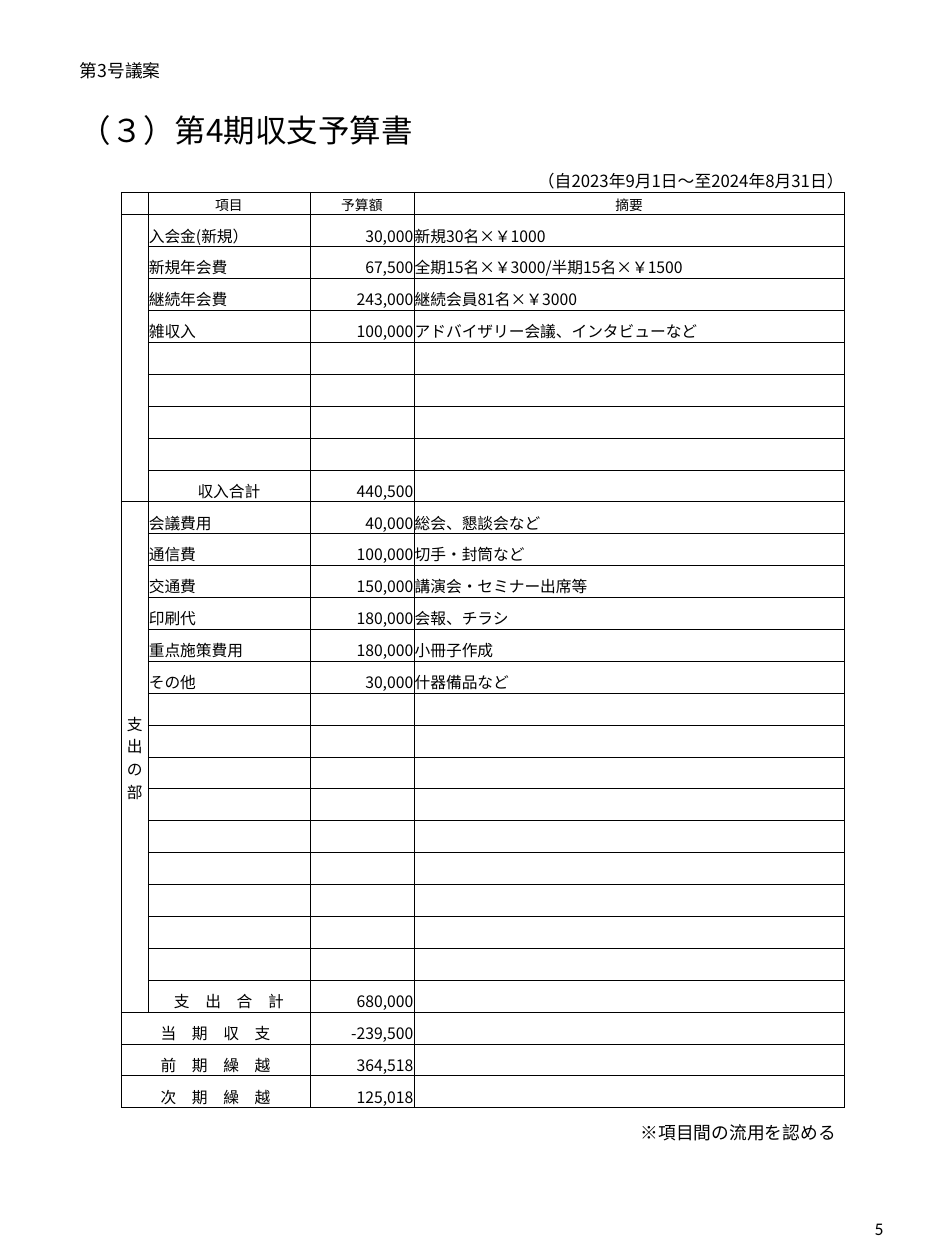
import lxml.etree
import pptx
import pptx.dml.color
import pptx.enum.text
import pptx.oxml.ns
import pptx.util

Inches = pptx.util.Inches
ALIGN = pptx.enum.text.PP_ALIGN
ANCHOR = pptx.enum.text.MSO_ANCHOR
qn = pptx.oxml.ns.qn

JAPANESE_FONT = "Noto Sans CJK JP"
BLACK = "000000"
COLUMN_WIDTHS = [0.38, 2.28, 1.47, 6.07]
DATE_HEIGHT, HEADER_HEIGHT, ROW_HEIGHT = 0.55, 0.32, 0.45

# Budget content: item, amount, remarks
PERIOD = "（自2023年9月1日～至2024年8月31日）"
HEADINGS = ["項目", "予算額", "摘要"]
INCOME = [
    ("入会金(新規）", "30,000", "新規30名×￥1000"),
    ("新規年会費", "67,500", "全期15名×￥3000/半期15名×￥1500"),
    ("継続年会費", "243,000", "継続会員81名×￥3000"),
    ("雑収入", "100,000", "アドバイザリー会議、インタビューなど"),
]
EXPENSES = [
    ("会議費用", "40,000", "総会、懇談会など"),
    ("通信費", "100,000", "切手・封筒など"),
    ("交通費", "150,000", "講演会・セミナー出席等"),
    ("印刷代", "180,000", "会報、チラシ"),
    ("重点施策費用", "180,000", "小冊子作成"),
    ("その他", "30,000", "什器備品など"),
]
# Section label, items, number of rows including the total, total
SECTIONS = [
    ("", INCOME, 9, ("収入合計", "440,500")),
    ("支出の部", EXPENSES, 16, ("支　出　合　計", "680,000")),
]
BALANCES = [
    ("当　期　収　支", "-239,500"),
    ("前　期　繰　越", "364,518"),
    ("次　期　繰　越", "125,018"),
]


def color(value):
    return pptx.dml.color.RGBColor.from_string(value)


def set_attributes(target, values):
    for name, value in values.items():
        setattr(target, name, value)


def write_text(text_frame, text, size, align=ALIGN.LEFT, font=JAPANESE_FONT):
    paragraph = text_frame.paragraphs[0]
    paragraph.alignment = align
    run = paragraph.add_run()
    run.text = text
    set_attributes(run.font, {"size": pptx.util.Pt(size), "name": font})
    run.font.color.rgb = color(BLACK)
    properties = run.font._element
    lxml.etree.SubElement(properties, qn("a:ea"), typeface=font)


def add_text(slide, text, left, top, width, height, size, **options):
    box = slide.shapes.add_textbox(
        Inches(left), Inches(top), Inches(width), Inches(height))
    box.text_frame.word_wrap = True
    write_text(box.text_frame, text, size, **options)


def set_borders(cell, visible_sides):
    properties = cell._tc.get_or_add_tcPr()
    for index, side in enumerate("LRTB"):
        line = lxml.etree.Element(qn(f"a:ln{side}"), w=str(pptx.util.Pt(0.5)))
        if side in visible_sides:
            fill = lxml.etree.SubElement(line, qn("a:solidFill"))
            lxml.etree.SubElement(fill, qn("a:srgbClr"), val=BLACK)
        else:
            lxml.etree.SubElement(line, qn("a:noFill"))
        properties.insert(index, line)


def format_cell(cell, visible_sides):
    set_attributes(cell, {
        "margin_left": Inches(0.01), "margin_right": Inches(0.01),
        "margin_top": Inches(0.01), "margin_bottom": 0,
        "vertical_anchor": ANCHOR.BOTTOM,
    })
    cell.fill.background()
    set_borders(cell, visible_sides)


def finish_empty_cell(cell):
    # Small type keeps an empty cell from stretching its row
    paragraph = cell.text_frame.paragraphs[0]
    lxml.etree.SubElement(paragraph._p, qn("a:endParaRPr"), sz="1400")


def fill_row(table, row, values, aligns, size=16):
    for column, (text, align) in enumerate(zip(values, aligns), start=1):
        write_text(table.cell(row, column).text_frame, text, size, align)


def fill_section(table, first_row, label, items, row_count, total):
    last_row = first_row + row_count - 1
    label_cell = table.cell(first_row, 0)
    label_cell.merge(table.cell(last_row, 0))
    if label:
        label_cell.vertical_anchor = ANCHOR.MIDDLE
        label_cell._tc.get_or_add_tcPr().set("vert", "eaVert")
        write_text(label_cell.text_frame, label, 16, ALIGN.CENTER)
    for row, item in enumerate(items, start=first_row):
        fill_row(table, row, item, [ALIGN.LEFT, ALIGN.RIGHT, ALIGN.LEFT])
    fill_row(table, last_row, total, [ALIGN.CENTER, ALIGN.RIGHT])
    return last_row + 1


def add_budget_table(slide, left, top):
    body_rows = sum(section[2] for section in SECTIONS) + len(BALANCES)
    heights = [DATE_HEIGHT, HEADER_HEIGHT] + [ROW_HEIGHT] * body_rows
    table = slide.shapes.add_table(
        len(heights), len(COLUMN_WIDTHS), Inches(left), Inches(top),
        Inches(sum(COLUMN_WIDTHS)), Inches(sum(heights))).table
    set_attributes(table, {"first_row": False, "horz_banding": False})
    for column, width in zip(table.columns, COLUMN_WIDTHS):
        column.width = Inches(width)
    for index, (row, height) in enumerate(zip(table.rows, heights)):
        row.height = Inches(height)
        for cell in row.cells:
            format_cell(cell, "LRTB" if index else "B")

    # Period and headings
    write_text(table.cell(0, 3).text_frame, PERIOD, 17, ALIGN.RIGHT)
    fill_row(table, 1, HEADINGS, [ALIGN.CENTER] * 3, size=14)

    # Income and expenses
    next_row = 2
    for section in SECTIONS:
        next_row = fill_section(table, next_row, *section)

    # Balances
    for row, (label, amount) in enumerate(BALANCES, start=next_row):
        label_cell = table.cell(row, 0)
        label_cell.merge(table.cell(row, 1))
        write_text(label_cell.text_frame, label, 16, ALIGN.CENTER)
        write_text(table.cell(row, 2).text_frame, amount, 16, ALIGN.RIGHT)

    for cell in table.iter_cells():
        if not cell.text_frame.text:
            finish_empty_cell(cell)


def main():
    presentation = pptx.Presentation()
    presentation.slide_width = Inches(13.33)
    presentation.slide_height = Inches(17.78)
    slide = presentation.slides.add_slide(presentation.slide_layouts[6])

    # Title and page number
    add_text(slide, "（３）第4期収支予算書", 1.03, 1.52, 10.45, 0.64, 32)
    add_text(slide, "5", 11.89, 17.13, 1.02, 0.4, 18,
             align=ALIGN.CENTER, font="Calibri")
    add_text(slide, "第3号議案", 1.03, 0.79, 2.84, 0.4, 18)

    # Budget and its footnote
    add_budget_table(slide, 1.71, 2.16)
    add_text(slide, "※項目間の流用を認める", 8.94, 15.78, 3.79, 0.4, 18)

    presentation.save("out.pptx")


if __name__ == "__main__":
    main()
